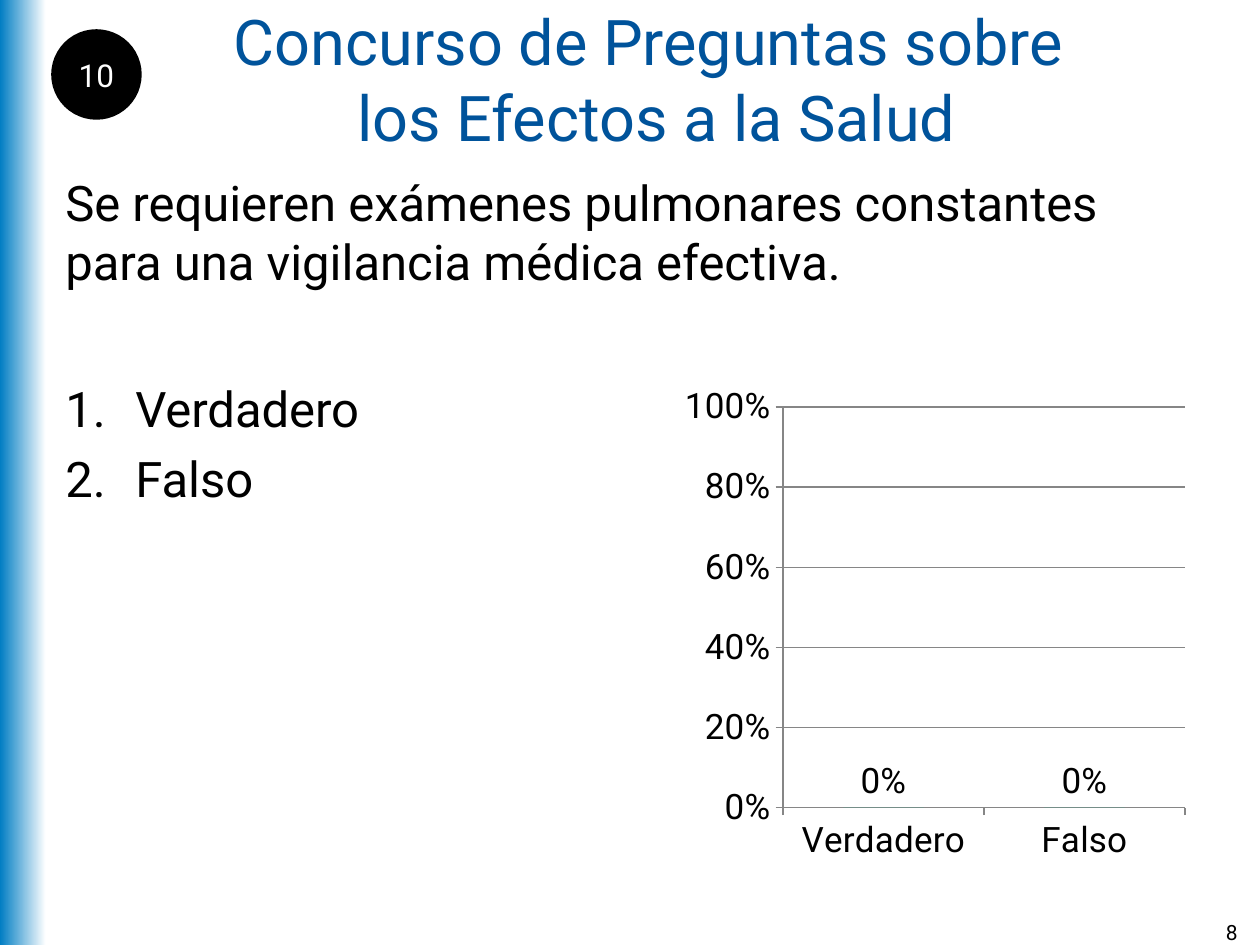
from lxml.etree import SubElement
from pptx import Presentation
from pptx.chart.data import CategoryChartData
from pptx.dml.color import RGBColor
from pptx.enum.chart import XL_CHART_TYPE, XL_LABEL_POSITION, XL_TICK_MARK
from pptx.enum.shapes import MSO_SHAPE
from pptx.enum.text import MSO_ANCHOR, PP_ALIGN
from pptx.oxml import parse_xml
from pptx.oxml.ns import nsdecls, qn
from pptx.util import Emu, Pt

FONT = "Roboto"
BLACK, WHITE, GREY = "000000", "FFFFFF", "868686"
TITLE_BLUE, BAND_BLUE, BAR_GREEN = "00539B", "007DC3", "00CC99"


def px(length):
    """Turn pixels into EMU."""
    return Emu(round(length * 914400 / 126))


def paint(color_format, color):
    """Apply a hex colour to a colour format."""
    color_format.rgb = RGBColor.from_string(color)


def style_font(font, size, color):
    """Set the typeface, size and colour of a font."""
    font.name = FONT
    font.size = Pt(size)
    paint(font.color, color)


def add_text(page, box, lines, size, color=BLACK, align=PP_ALIGN.LEFT,
             anchor=MSO_ANCHOR.TOP, space=0):
    """Add a wrapped text box with one paragraph per line."""
    shape = page.shapes.add_textbox(*map(px, box))
    frame = shape.text_frame
    frame.word_wrap = True
    frame.vertical_anchor = anchor
    frame.text = "\n".join(lines)
    for para in frame.paragraphs:
        para.alignment = align
        para.space_before = Pt(space)
        for span in para.runs:
            style_font(span.font, size, color)
    return shape


def add_side_band(page, box):
    """Add the band that fades from blue to white."""
    band = page.shapes.add_shape(MSO_SHAPE.RECTANGLE, *map(px, box))
    band.shadow.inherit = False
    band.line.fill.background()
    band.fill.gradient()
    band.fill.gradient_angle = 0
    for stop, color, position in zip(band.fill.gradient_stops, (BAND_BLUE, WHITE), (0, 1)):
        paint(stop.color, color)
        stop.position = position


def add_title(page, box):
    """Add the centred two-line title."""
    add_text(page, box, ["Concurso de Preguntas sobre \vlos Efectos a la Salud"],
             36, TITLE_BLUE, PP_ALIGN.CENTER, MSO_ANCHOR.MIDDLE)


def add_answers(page, box, answers):
    """Add the numbered list of answers."""
    shape = add_text(page, box, answers, 28, space=6.5)
    indent = px(70)
    for para in shape.text_frame.paragraphs:
        properties = para._p.get_or_add_pPr()
        properties.set("marL", str(indent))
        properties.set("indent", str(-indent))
        SubElement(properties, qn("a:buFont"), typeface="+mj-lt")
        SubElement(properties, qn("a:buAutoNum"), type="arabicPeriod")


def add_countdown(page, box, seconds):
    """Add the round countdown badge."""
    badge = page.shapes.add_shape(MSO_SHAPE.OVAL, *map(px, box))
    badge.shadow.inherit = False
    badge.fill.solid()
    paint(badge.fill.fore_color, BLACK)
    paint(badge.line.color, BLACK)
    badge.line.width = Pt(2)
    frame = badge.text_frame
    frame.margin_left = frame.margin_right = frame.margin_top = frame.margin_bottom = 0
    frame.word_wrap = False
    frame.vertical_anchor = MSO_ANCHOR.MIDDLE
    frame.text = seconds
    para = frame.paragraphs[0]
    para.alignment = PP_ALIGN.CENTER
    style_font(para.runs[0].font, 18, WHITE)


def place_plot(chart, box, plot_box):
    """Fix the inner plot area, given in pixels within the chart's box."""
    width, height = box[2:]
    sizes = "".join(
        f'<c:{key} val="{length / whole}"/>'
        for key, length, whole in zip("xywh", plot_box, (width, height) * 2))
    layout = parse_xml(
        f'<c:layout {nsdecls("c")}><c:manualLayout><c:layoutTarget val="inner"/>'
        f'<c:xMode val="edge"/><c:yMode val="edge"/>{sizes}</c:manualLayout></c:layout>')
    plot_area = chart._chartSpace.chart.plotArea
    for old in plot_area.findall(qn("c:layout")):
        plot_area.remove(old)
    plot_area.insert(0, layout)


def add_votes_chart(page, box, answers):
    """Add the column chart of votes for each answer."""
    data = CategoryChartData(number_format="0%")
    data.categories = answers
    data.add_series("Series 1", [0] * len(answers))
    chart = page.shapes.add_chart(XL_CHART_TYPE.COLUMN_CLUSTERED, *map(px, box), data).chart
    chart.has_legend = False
    chart.has_title = False
    style_font(chart.font, 20, BLACK)
    for axis in (chart.category_axis, chart.value_axis):
        axis.major_tick_mark = XL_TICK_MARK.OUTSIDE
        axis.minor_tick_mark = XL_TICK_MARK.NONE
        paint(axis.format.line.color, GREY)
    scale = chart.value_axis
    scale.minimum_scale, scale.maximum_scale, scale.major_unit = 0, 1, 0.2
    scale.tick_labels.number_format = "0%"
    scale.tick_labels.number_format_is_linked = False
    scale.has_major_gridlines = True
    paint(scale.major_gridlines.format.line.color, GREY)
    plot = chart.plots[0]
    plot.gap_width = 150
    plot.vary_by_categories = False
    series = plot.series[0]
    series.format.fill.solid()
    paint(series.format.fill.fore_color, BAR_GREEN)
    labels = series.data_labels
    labels.show_value = True
    labels.number_format = "0%"
    labels.number_format_is_linked = False
    labels.position = XL_LABEL_POSITION.OUTSIDE_END
    style_font(labels.font, 20, BLACK)
    place_plot(chart, box, (143, 39, 402, 401))


def main():
    """Build the quiz slide and save it."""
    deck = Presentation()
    deck.slide_width, deck.slide_height = px(1260), px(945)
    page = deck.slides.add_slide(deck.slide_layouts[6])
    answers = ["Verdadero", "Falso"]
    add_side_band(page, (0, 0, 46, 945))
    add_title(page, (53, 0, 1207, 157))
    add_text(page, (1187, 913, 63, 31), ["8"], 12, align=PP_ALIGN.RIGHT)
    question = "Se requieren exámenes pulmonares constantes para una vigilancia médica efectiva."
    add_text(page, (53, 166, 1155, 144), [question], 28, space=6.5)
    add_answers(page, (53, 372, 564, 525), answers)
    add_countdown(page, (53, 31, 87, 87), "10")
    add_votes_chart(page, (640, 368, 564, 525), answers)
    deck.save("out.pptx")


if __name__ == "__main__":
    main()
